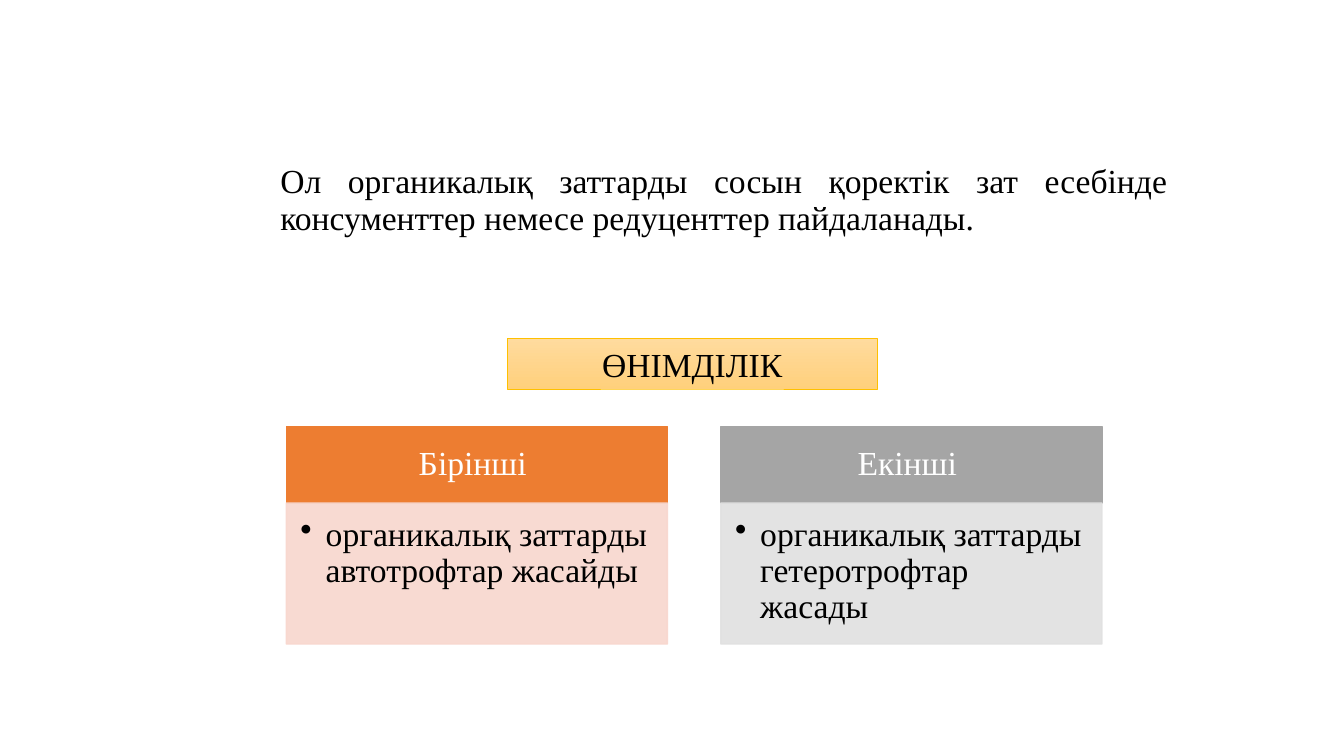
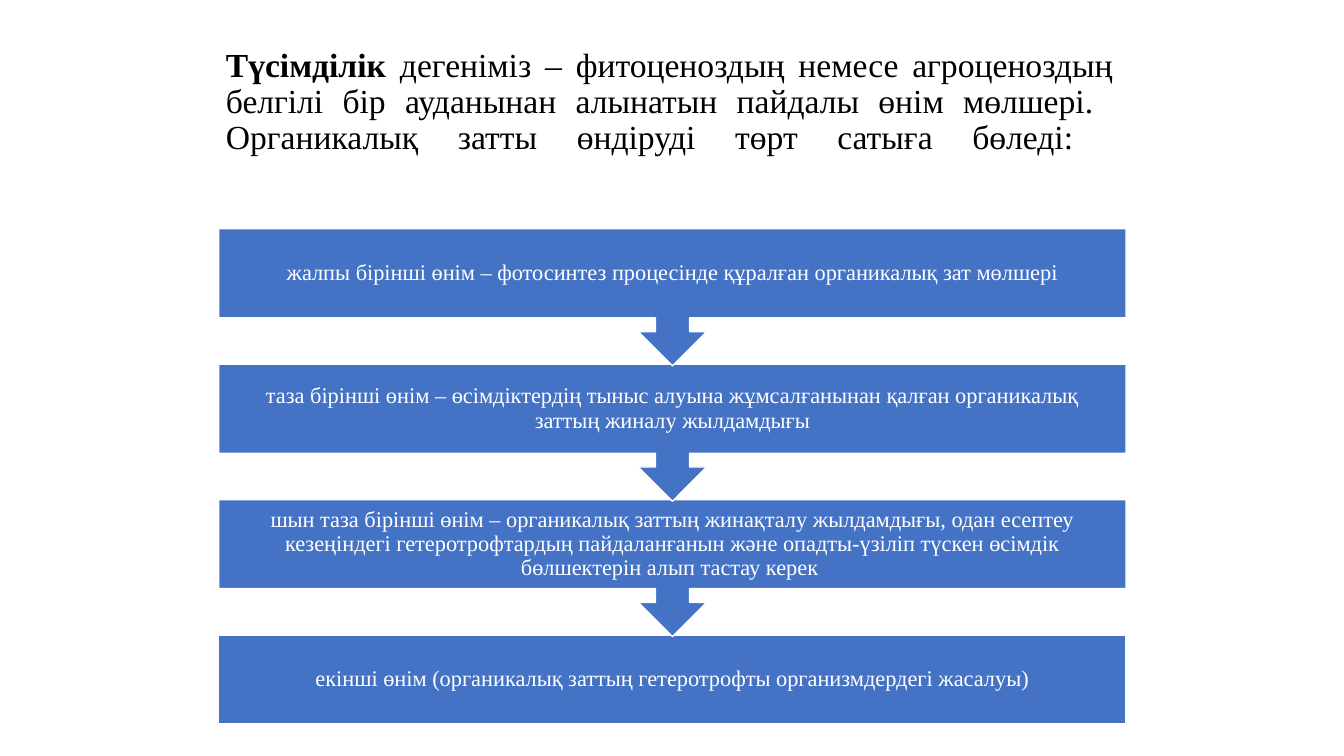
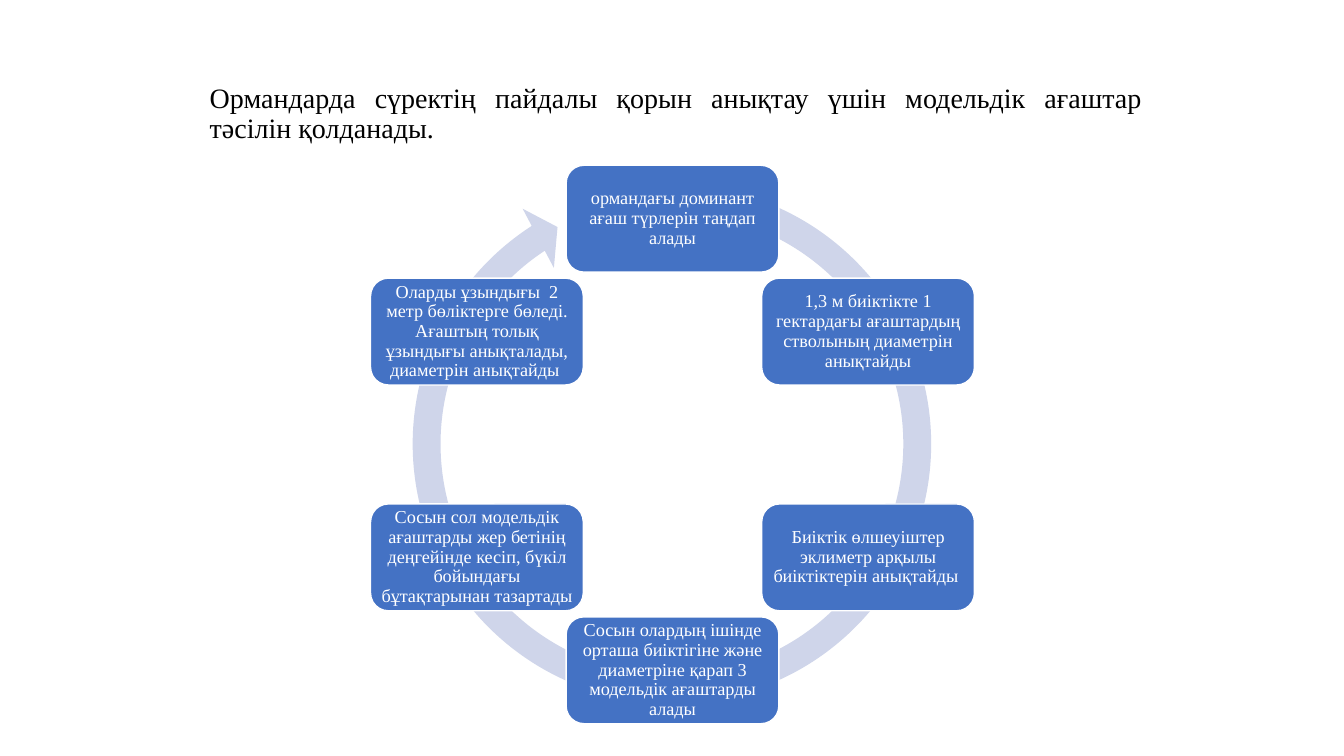
from math import cos, radians, sin

from lxml.etree import SubElement
from pptx import Presentation
from pptx.dml.color import RGBColor
from pptx.enum.shapes import MSO_SHAPE as Shape
from pptx.enum.text import MSO_ANCHOR as Anchor, PP_ALIGN as Align
from pptx.oxml.ns import qn
from pptx.util import Inches, Pt

FONT = "Times New Roman"
BLACK = RGBColor(0x00, 0x00, 0x00)
WHITE = RGBColor(0xFF, 0xFF, 0xFF)
BLUE = RGBColor(0x44, 0x72, 0xC4)
PALE_BLUE = RGBColor(0xCF, 0xD5, 0xEA)
ORANGE = RGBColor(0xED, 0x7D, 0x31)
PALE_ORANGE = RGBColor(0xF8, 0xD7, 0xCE)
GRAY = RGBColor(0xA5, 0xA5, 0xA5)
PALE_GRAY = RGBColor(0xE1, 0xE1, 0xE1)
GOLD = RGBColor(0xFF, 0xC0, 0x00)
LIGHT_GOLD = RGBColor(0xFF, 0xDB, 0x9E)
DEEP_GOLD = RGBColor(0xFF, 0xD0, 0x7C)

TITLE_ONLY = 5
LINE_SPACING = 0.9

COLUMNS = [
    ("Бірінші ", "органикалық заттарды автотрофтар жасайды", ORANGE, PALE_ORANGE),
    ("Екінші ", "органикалық заттарды гетеротрофтар жасады", GRAY, PALE_GRAY),
]
STAGES = [
    "жалпы бірінші өнім – фотосинтез процесінде құралған органикалық зат мөлшері",
    "таза бірінші өнім – өсімдіктердің тыныс алуына жұмсалғанынан қалған "
    "органикалық заттың жиналу жылдамдығы",
    "шын таза бірінші өнім – органикалық заттың жинақталу жылдамдығы, одан есептеу "
    "кезеңіндегі гетеротрофтардың пайдаланғанын және опадты-үзіліп түскен өсімдік "
    "бөлшектерін алып тастау керек ",
    "екінші өнім (органикалық заттың гетеротрофты организмдердегі жасалуы)",
]
CYCLE_STEPS = [
    "ормандағы доминант ағаш түрлерін таңдап алады",
    "1,3 м биіктікте 1 гектардағы ағаштардың стволының диаметрін анықтайды",
    "Биіктік өлшеуіштер эклиметр арқылы биіктіктерін анықтайды ",
    "Сосын олардың ішінде орташа биіктігіне және диаметріне қарап 3 модельдік "
    "ағаштарды алады",
    "Сосын сол модельдік ағаштарды жер бетінің деңгейінде кесіп, бүкіл бойындағы "
    "бұтақтарынан тазартады",
    "Оларды ұзындығы  2 метр бөліктерге бөледі. Ағаштың толық ұзындығы анықталады, "
    "диаметрін анықтайды ",
]


def format_span(span, size, color, bold=False):
    span.font.name = FONT
    span.font.size = Pt(size)
    span.font.color.rgb = color
    span.font.bold = bold


def add_page(deck, area, size, text, lead=""):
    page = deck.slides.add_slide(deck.slide_layouts[TITLE_ONLY])
    title = page.shapes.title
    title.left, title.top, title.width, title.height = map(Inches, area)
    frame = title.text_frame
    frame.word_wrap = True
    frame.vertical_anchor = Anchor.MIDDLE
    para = frame.paragraphs[0]
    para.text = lead
    para.alignment = Align.JUSTIFY
    para.line_spacing = LINE_SPACING
    para.font.size = Pt(size)
    for span in para.runs:
        format_span(span, size, BLACK, bold=True)
    for index, line in enumerate(text.split("\n")):
        if index:
            para.add_line_break()
        if line:
            span = para.add_run()
            span.text = line
            format_span(span, size, BLACK)
    return page


def add_block(page, kind, area, fill, line=None, line_width=1):
    box = page.shapes.add_shape(kind, *map(Inches, area))
    box.shadow.inherit = False
    box.fill.solid()
    box.fill.fore_color.rgb = fill
    if line is None:
        box.line.fill.background()
    else:
        box.line.color.rgb = line
        box.line.width = Pt(line_width)
    return box


def write(box, text, size, color, insets, align=Align.CENTER, anchor=Anchor.MIDDLE):
    frame = box.text_frame
    frame.word_wrap = True
    frame.vertical_anchor = anchor
    (frame.margin_left, frame.margin_top,
     frame.margin_right, frame.margin_bottom) = map(Inches, insets)
    frame.text = text
    para = frame.paragraphs[0]
    para.alignment = align
    para.line_spacing = LINE_SPACING
    format_span(para.runs[0], size, color)
    return para


def add_bullet(para, indent):
    properties = para._p.get_or_add_pPr()
    properties.set("marL", str(Inches(indent)))
    properties.set("indent", str(-Inches(indent)))
    SubElement(properties, qn("a:buChar")).set("char", "•")


def set_opacity(box, percent):
    for color in box._element.spPr.iter(qn("a:srgbClr")):
        SubElement(color, qn("a:alpha")).set("val", str(percent * 1000))


def add_column(page, left, heading, text, color, pale):
    width, top, head_height, body_height = 3.78, 4.23, 0.76, 1.4
    head = add_block(page, Shape.RECTANGLE, (left, top, width, head_height), color, color)
    write(head, heading, 24, WHITE, (0.19, 0.11, 0.19, 0.11))
    body = add_block(page, Shape.RECTANGLE,
                     (left, top + head_height, width, body_height), pale, pale)
    set_opacity(body, 90)
    para = write(body, text, 24, BLACK, (0.14, 0.14, 0.19, 0.21), Align.LEFT, Anchor.TOP)
    add_bullet(para, 0.25)


def add_productivity_page(deck):
    page = add_page(deck, (2.68, 1.41, 9, 1.17), 24,
                    "Ол органикалық заттарды сосын қоректік зат есебінде "
                    "консументтер немесе редуценттер пайдаланады.")
    for index, column in enumerate(COLUMNS):
        add_column(page, 2.84 + index * 4.31, *column)
    label = add_block(page, Shape.RECTANGLE, (5.03, 3.36, 3.67, 0.5), LIGHT_GOLD, GOLD, 0.5)
    label.fill.gradient()
    label.fill.gradient_angle = 270
    for stop, color in zip(label.fill.gradient_stops, (LIGHT_GOLD, DEEP_GOLD)):
        stop.color.rgb = color
    para = write(label, "ӨНІМДІЛІК", 24, BLACK, (0.1, 0.05, 0.1, 0.05))
    para.line_spacing = 1.0


def add_stages_page(deck):
    page = add_page(deck, (2.14, 0.41, 9, 1.62), 24,
                    " дегеніміз – фитоценоздың немесе агроценоздың белгілі бір "
                    "ауданынан алынатын пайдалы өнім мөлшері. \n"
                    "Органикалық затты өндіруді төрт сатыға бөледі: \n",
                    lead="Түсімділік")
    first_top, last_top = 2.27, 6.3
    last = len(STAGES) - 1
    for index in range(last, -1, -1):
        kind, height = Shape.DOWN_ARROW_CALLOUT, 1.36
        if index == last:
            kind, height = Shape.RECTANGLE, 0.88
        top = first_top + index * (last_top - first_top) / last
        box = add_block(page, kind, (2.17, top, 9, height), BLUE, WHITE)
        write(box, STAGES[index], 16, WHITE, (0.12,) * 4)


def add_cycle_page(deck):
    page = add_page(deck, (1.98, 0.55, 9.45, 1.17), 20,
                    "Ормандарда сүректің пайдалы қорын анықтау үшін модельдік "
                    "ағаштар тәсілін қолданады.")
    ring = add_block(page, Shape.CIRCULAR_ARROW, (3.9, 1.64, 5.53, 5.53), PALE_BLUE)
    for index, value in enumerate((0.05, 3.13, 142.19, 171.33, 0.06)):
        ring.adjustments[index] = value
    center_x, center_y, radius = 6.67, 4.41, 2.24
    width, height = 2.11, 1.06
    for index, text in enumerate(CYCLE_STEPS):
        angle = radians(index * 360 / len(CYCLE_STEPS))
        left = center_x + radius * sin(angle) - width / 2
        top = center_y - radius * cos(angle) - height / 2
        box = add_block(page, Shape.ROUNDED_RECTANGLE, (left, top, width, height), BLUE, WHITE)
        write(box, text, 13, WHITE, (0.05,) * 4)


def main():
    deck = Presentation()
    deck.slide_width, deck.slide_height = Inches(13.33), Inches(7.5)
    add_productivity_page(deck)
    add_stages_page(deck)
    add_cycle_page(deck)
    deck.save("out.pptx")


if __name__ == "__main__":
    main()
